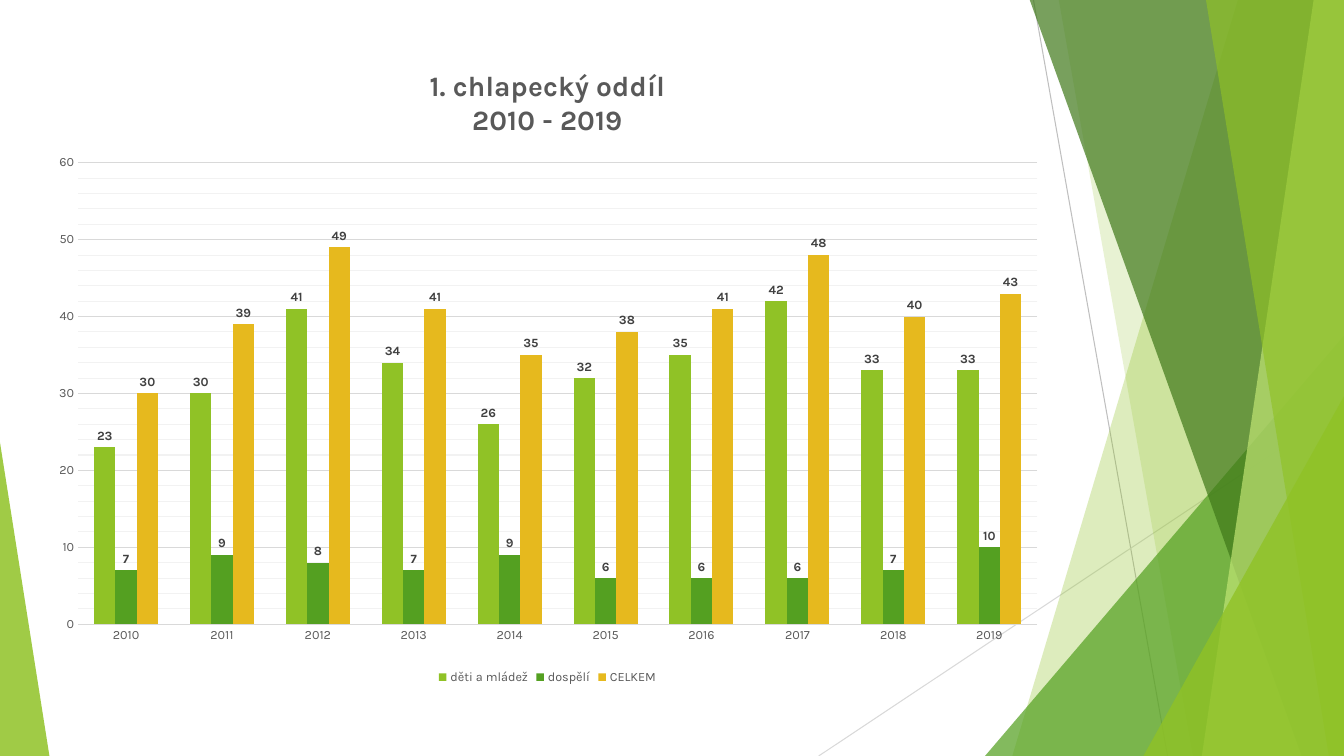
import pptx
import pptx.chart.data
import pptx.dml.color
import pptx.enum.chart
import pptx.enum.shapes
import pptx.enum.text
import pptx.oxml
import pptx.oxml.ns
import pptx.util
from pptx.util import Inches

COLORS = {
    "lime": "90C226", "green": "54A021", "forest": "3F7819", "pale": "C0E474",
    "gold": "E6B91E", "text": "595959", "label": "404040", "line": "BFBFBF",
    "grid": "D9D9D9", "minor": "F2F2F2",
}
FONT = "Karla"


def rgb(name):
    return pptx.dml.color.RGBColor.from_string(COLORS[name])


def add_text(p, text, size=20, color="text", bold=True):
    p.alignment = pptx.enum.text.PP_ALIGN.CENTER
    r = p.add_run()
    r.text = text
    r.font.name, r.font.size, r.font.bold = FONT, pptx.util.Pt(size), bold
    r.font.color.rgb = rgb(color)


prs = pptx.Presentation()
prs.slide_width, prs.slide_height = Inches(13.33), Inches(7.5)
s = prs.slides.add_slide(prs.slide_layouts[6])

for x1, y1, x2, y2, color in [
    (10.25, 0, 11.58, 7.5, "line"),
    (13.33, 4.03, 8.12, 7.5, "grid"),
]:
    line = s.shapes.add_connector(
        pptx.enum.shapes.MSO_CONNECTOR.STRAIGHT,
        Inches(x1), Inches(y1), Inches(x2), Inches(y2))
    line.line.color.rgb = rgb(color)
    line.line.width = pptx.util.Pt(0.75)
    pptx.oxml.ns.qn("a:effectLst")
    line._element.spPr.append(
        pptx.oxml.parse_xml("<a:effectLst %s/>" % pptx.oxml.ns.nsdecls("a")))

right, bottom = 13.33, 7.5
facets = [
    ([(12.28, -0.01), (right, -0.01), (right, bottom), (10.04, bottom)], "lime", 30),
    ([(10.5, -0.01), (right, -0.01), (right, bottom), (11.83, bottom)], "lime", 20),
    ([(9.77, 3.33, 3.56, 4.17), 1], "green", 72),
    ([(10.21, -0.01), (right, -0.01), (right, bottom), (12.91, bottom)], "forest", 70),
    ([(13.03, -0.01), (right, -0.01), (right, bottom), (11.92, bottom)], "pale", 70),
    ([(11.96, -0.01), (right, -0.01), (right, bottom), (13.18, bottom)], "lime", 65),
    ([(11.34, 3.93, 1.99, 3.57), 1], "lime", 80),
    ([(0, 4.39, 0.49, 3.11), 0], "lime", 85),
]
for outline, color, opacity in facets:
    if len(outline) == 2:
        box, apex = outline
        sp = s.shapes.add_shape(
            pptx.enum.shapes.MSO_SHAPE.ISOSCELES_TRIANGLE, *map(Inches, box))
        sp.adjustments[0] = apex
    else:
        points = [(Inches(x), Inches(y)) for x, y in outline]
        builder = s.shapes.build_freeform(*points[0])
        builder.add_line_segments(points[1:], close=True)
        sp = builder.convert_to_shape()
    sp.shadow.inherit = False
    sp.line.fill.background()
    sp.fill.solid()
    sp.fill.fore_color.rgb = rgb(color)
    sp._element.spPr.find(".//" + pptx.oxml.ns.qn("a:srgbClr")).append(
        pptx.oxml.parse_xml('<a:alpha %s val="%d"/>' % (
            pptx.oxml.ns.nsdecls("a"), opacity * 1000)))

series = [
    ("děti a mládež", [23, 30, 41, 34, 26, 32, 35, 42, 33, 33], "lime"),
    ("dospělí", [7, 9, 8, 7, 9, 6, 6, 6, 7, 10], "green"),
    ("CELKEM", [30, 39, 49, 41, 35, 38, 41, 48, 40, 43], "gold"),
]
data = pptx.chart.data.CategoryChartData()
data.categories = [str(year) for year in range(2010, 2020)]
for name, values, color in series:
    data.add_series(name, values)
chart = s.shapes.add_chart(
    pptx.enum.chart.XL_CHART_TYPE.COLUMN_CLUSTERED,
    Inches(0.37), Inches(0.47), Inches(10.12), Inches(6.36), data).chart
chart.font.name, chart.font.size = FONT, pptx.util.Pt(9)
chart.font.color.rgb = rgb("text")

tf = chart.chart_title.text_frame
add_text(tf.paragraphs[0], "1. chlapecký oddíl")
add_text(tf.add_paragraph(), "2010 - 2019")
chart.chart_title.include_in_layout = False

chart.has_legend = True
chart.legend.position = pptx.enum.chart.XL_LEGEND_POSITION.BOTTOM
chart.legend.include_in_layout = False

for axis in (chart.category_axis, chart.value_axis):
    axis.major_tick_mark = axis.minor_tick_mark = pptx.enum.chart.XL_TICK_MARK.NONE
    axis.format.line.fill.background()
axis = chart.value_axis
axis.minimum_scale, axis.maximum_scale = 0, 60
axis.major_unit, axis.minor_unit = 10, 2
axis.has_major_gridlines = axis.has_minor_gridlines = True
for grid, color in [(axis.major_gridlines, "grid")]:
    grid.format.line.color.rgb = rgb(color)
    grid.format.line.width = pptx.util.Pt(0.75)
minor = axis._element.find(pptx.oxml.ns.qn("c:minorGridlines"))
minor.append(pptx.oxml.parse_xml(
    '<c:spPr %s><a:ln w="9525"><a:solidFill><a:srgbClr val="%s"/></a:solidFill></a:ln></c:spPr>'
    % (pptx.oxml.ns.nsdecls("c", "a"), COLORS["minor"])))

plot = chart.plots[0]
plot.gap_width, plot.overlap, plot.vary_by_categories = 150, 0, False
for bars, (name, values, color) in zip(plot.series, series):
    bars.format.fill.solid()
    bars.format.fill.fore_color.rgb = rgb(color)
    labels = bars.data_labels
    labels.show_value = True
    labels.position = pptx.enum.chart.XL_LABEL_POSITION.OUTSIDE_END
    labels.font.name, labels.font.size = FONT, pptx.util.Pt(9)
    labels.font.bold = True
    labels.font.color.rgb = rgb("label")

area = chart._chartSpace.chart.plotArea
for old in area.findall(pptx.oxml.ns.qn("c:layout")):
    area.remove(old)
area.insert(0, pptx.oxml.parse_xml(
    '<c:layout %s><c:manualLayout><c:layoutTarget val="inner"/>'
    '<c:xMode val="edge"/><c:yMode val="edge"/><c:x val="0.04"/><c:y val="0.18"/>'
    '<c:w val="0.94"/><c:h val="0.72"/></c:manualLayout></c:layout>'
    % pptx.oxml.ns.nsdecls("c")))

prs.save("out.pptx")
